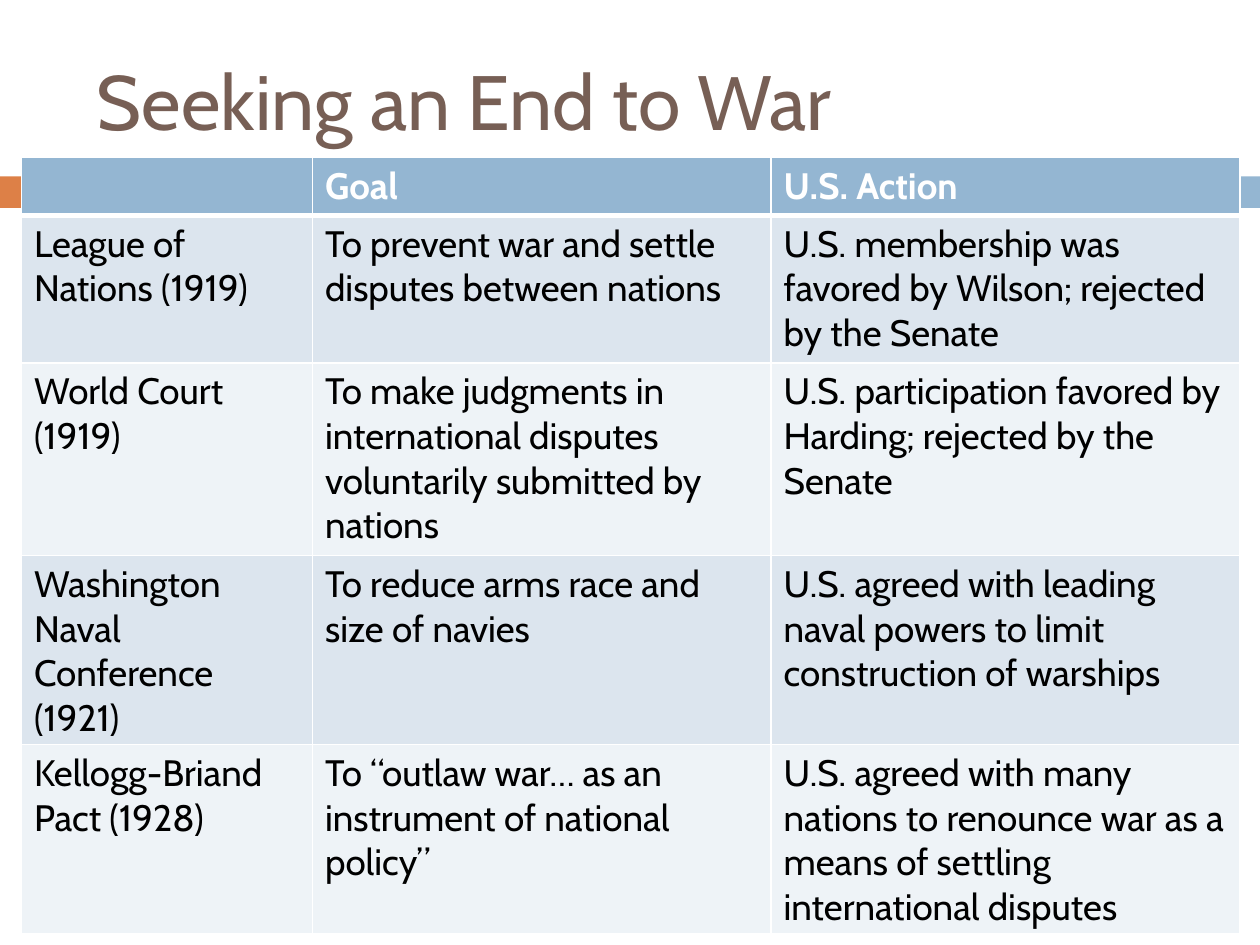
from lxml import etree
from pptx import Presentation
from pptx import util as u
from pptx.dml.color import RGBColor
from pptx.enum import shapes, text
from pptx.oxml.ns import qn

FONT = "Cabin"
COLORS = {
    "orange": "DD8047",
    "blue": "94B6D2",
    "title": "775F55",
    "white": "FFFFFF",
    "black": "000000",
    "odd_row": "DCE5EE",
    "even_row": "EEF3F7",
}
COLUMN_WIDTHS = [2.31, 3.64, 3.72]
ROW_HEIGHTS = [0.46, 1.17, 1.53, 1.38, 1.38]
ROWS = [
    ["", "Goal", "U.S. Action"],
    ["League of Nations (1919)",
     "To prevent war and settle disputes between nations",
     "U.S. membership was favored by Wilson; rejected by the Senate"],
    ["World Court (1919)",
     "To make judgments in international disputes voluntarily submitted by nations",
     "U.S. participation favored by Harding; rejected by the Senate"],
    ["Washington Naval Conference (1921)",
     "To reduce arms race and size of navies",
     "U.S. agreed with leading naval powers to limit construction of warships"],
    ["Kellogg-Briand Pact (1928)",
     "To “outlaw war… as an instrument of national policy”",
     "U.S. agreed with many nations to renounce war as a means of settling "
     "international disputes"],
]


def color(name):
    return RGBColor.from_string(COLORS[name])


def add_run(paragraph, content, size, color_name, bold=False):
    run = paragraph.add_run()
    run.text = content
    run.font.name = FONT
    run.font.size = u.Pt(size)
    run.font.bold = bold
    run.font.color.rgb = color(color_name)


def add_bar(slide, left, width, color_name):
    bar = slide.shapes.add_shape(
        shapes.MSO_SHAPE.RECTANGLE,
        u.Inches(left), u.Inches(1.4), u.Inches(width), u.Inches(0.25))
    bar.shadow.inherit = False
    bar.fill.solid()
    bar.fill.fore_color.rgb = color(color_name)
    bar.line.fill.background()


def add_title(slide, content):
    box = slide.shapes.add_textbox(
        u.Inches(0.67), u.Inches(0.25), u.Inches(8.92), u.Inches(1.08))
    frame = box.text_frame
    frame.word_wrap = True
    frame.vertical_anchor = text.MSO_ANCHOR.MIDDLE
    add_run(frame.paragraphs[0], content, 44, "title")


def set_borders(cell, widths):
    properties = cell._tc.get_or_add_tcPr()
    for position, (side, width) in enumerate(widths.items()):
        line = etree.Element(qn(f"a:ln{side}"), w=str(u.Pt(width)))
        fill = etree.SubElement(line, qn("a:solidFill"))
        etree.SubElement(fill, qn("a:srgbClr"), val=COLORS["white"])
        properties.insert(position, line)


def fill_cell(cell, content, row_index):
    is_header = row_index == 0
    fill_name = "blue" if is_header else "odd_row" if row_index % 2 else "even_row"
    cell.fill.solid()
    cell.fill.fore_color.rgb = color(fill_name)
    set_borders(cell, {"L": 1, "R": 1,
                       "T": 3 if row_index == 1 else 1,
                       "B": 3 if is_header else 1})
    if content:
        add_run(cell.text_frame.paragraphs[0], content, 21,
                "white" if is_header else "black", is_header)


def add_comparison_table(slide):
    frame = slide.shapes.add_table(
        len(ROWS), len(COLUMN_WIDTHS), u.Inches(0.17), u.Inches(1.25),
        u.Inches(sum(COLUMN_WIDTHS)), u.Inches(sum(ROW_HEIGHTS)))
    table = frame.table
    for column, width in zip(table.columns, COLUMN_WIDTHS):
        column.width = u.Inches(width)
    for row_index, (row, height) in enumerate(zip(table.rows, ROW_HEIGHTS)):
        row.height = u.Inches(height)
        for cell, content in zip(row.cells, ROWS[row_index]):
            fill_cell(cell, content, row_index)


def main():
    presentation = Presentation()
    presentation.slide_width = u.Inches(10)
    presentation.slide_height = u.Inches(7.5)
    slide = presentation.slides.add_slide(presentation.slide_layouts[6])
    add_bar(slide, 0, 0.58, "orange")
    add_bar(slide, 0.65, 9.35, "blue")
    add_title(slide, "Seeking an End to War")
    add_comparison_table(slide)
    presentation.save("out.pptx")


if __name__ == "__main__":
    main()
